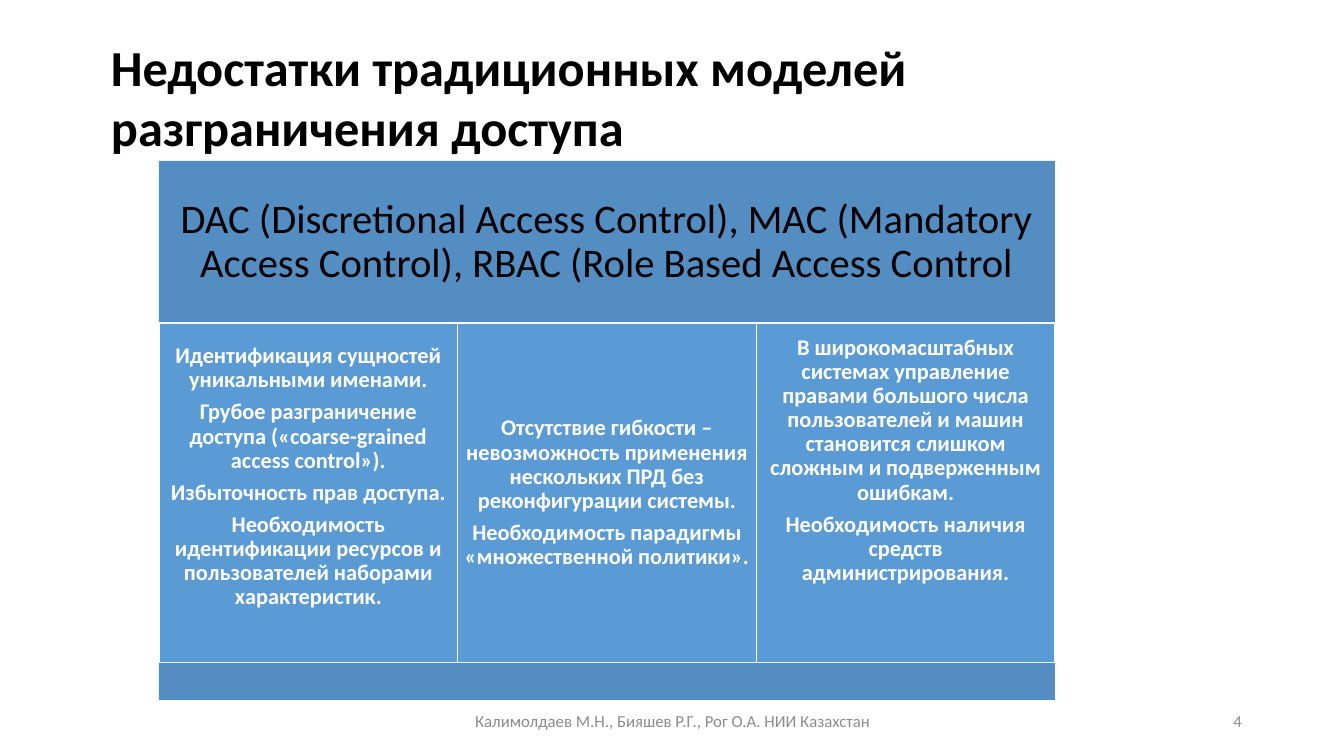
import pptx
import pptx.util
import pptx.dml.color
import pptx.enum.shapes
import pptx.enum.text

ALIGN = pptx.enum.text.PP_ALIGN
ANCHOR = pptx.enum.text.MSO_ANCHOR

# Content
TITLE = "Недостатки традиционных моделей разграничения доступа"
HEADING = "DAC (Discretional Access Control), MAC (Mandatory Access Control), RBAC (Role Based Access Control"
# Each column: free space kept below the text (px), paragraphs
COLUMNS = [
    (32, [
        "Идентификация сущностей уникальными именами.",
        "Грубое разграничение доступа («coarse-grained access control»).",
        "Избыточность прав доступа.",
        "Необходимость идентификации ресурсов и пользователей наборами характеристик.",
    ]),
    (0, [
        "Отсутствие гибкости – невозможность применения нескольких ПРД без реконфигурации системы.",
        "Необходимость парадигмы «множественной политики».",
    ]),
    (65, [
        "В широкомасштабных системах управление правами большого числа пользователей и машин "
        "становится слишком сложным и подверженным ошибкам.",
        "Необходимость наличия средств администрирования.",
    ]),
]
FOOTER = "Калимолдаев М.Н., Бияшев Р.Г., Рог О.А. НИИ Казахстан"
NUMBER = "4"

# Geometry in px
SLIDE = (1344, 756)
TITLE_BOX = (101, 31, 1143, 132)
LEFT, TOP, WIDTH = 159, 161, 896
HEADING_HEIGHT, COLUMN_HEIGHT, BASE_HEIGHT = 162, 340, 37
FOOTER_BOX = (446, 701, 454, 40)
NUMBER_BOX = (950, 701, 302, 40)

# Formats
TITLE_FONT = {"size": 36, "bold": True, "color": "000000"}
HEADING_FONT = {"size": 29, "bold": False, "color": "000000"}
COLUMN_FONT = {"size": 16, "bold": True, "color": "FFFFFF"}
FOOTER_FONT = {"size": 12, "bold": False, "color": "8C8C8C"}
BAND, COLUMN, WHITE = "538DC1", "5B9BD5", "FFFFFF"


def px(value):
    return pptx.util.Emu(round(value * 914400 / 100.8))


def rgb(value):
    return pptx.dml.color.RGBColor.from_string(value)


def set_attributes(target, values):
    for name, value in values.items():
        setattr(target, name, value)


def write(shape, texts, font, align, anchor, insets=(10, 5, 10, 5), spacing=None):
    frame = shape.text_frame
    names = ("margin_left", "margin_top", "margin_right", "margin_bottom")
    set_attributes(frame, {
        "word_wrap": True,
        "auto_size": pptx.enum.text.MSO_AUTO_SIZE.NONE,
        "vertical_anchor": anchor,
        **{name: px(inset) for name, inset in zip(names, insets)},
    })
    for index, text in enumerate(texts):
        para = frame.add_paragraph() if index else frame.paragraphs[0]
        set_attributes(para, {"alignment": align, **(spacing or {})})
        span = para.add_run()
        span.text = text
        set_attributes(span.font, {
            "name": "Calibri",
            "size": pptx.util.Pt(font["size"]),
            "bold": font["bold"],
        })
        span.font.color.rgb = rgb(font["color"])


def tight(size):
    return {"line_spacing": 0.9, "space_after": pptx.util.Pt(round(0.35 * size, 1))}


def add_block(page, place, fill, line=None):
    rectangle = pptx.enum.shapes.MSO_SHAPE.RECTANGLE
    block = page.shapes.add_shape(rectangle, *map(px, place))
    block.shadow.inherit = False
    block.fill.solid()
    block.fill.fore_color.rgb = rgb(fill)
    if line:
        block.line.color.rgb = rgb(line)
        block.line.width = pptx.util.Pt(1)
    else:
        block.line.fill.background()
    return block


def main():
    deck = pptx.Presentation()
    deck.slide_width, deck.slide_height = map(px, SLIDE)
    page = deck.slides.add_slide(deck.slide_layouts[5])

    # Title
    title = page.shapes.title
    set_attributes(title, dict(zip(("left", "top", "width", "height"), map(px, TITLE_BOX))))
    write(title, [TITLE], TITLE_FONT, ALIGN.LEFT, ANCHOR.TOP)

    # Heading band
    heading = add_block(page, (LEFT, TOP, WIDTH, HEADING_HEIGHT), BAND)
    write(heading, [HEADING], HEADING_FONT, ALIGN.CENTER, ANCHOR.MIDDLE,
          (12, 12, 12, 12), tight(HEADING_FONT["size"]))

    # Three equal columns
    column_top = TOP + HEADING_HEIGHT
    column_width = WIDTH / len(COLUMNS)
    for index, (space_below, texts) in enumerate(COLUMNS):
        place = (LEFT + index * column_width, column_top, column_width, COLUMN_HEIGHT)
        block = add_block(page, place, COLUMN, WHITE)
        write(block, texts, COLUMN_FONT, ALIGN.CENTER, ANCHOR.MIDDLE,
              (7, 7, 7, 7 + space_below), tight(COLUMN_FONT["size"]))

    # Base band
    add_block(page, (LEFT, column_top + COLUMN_HEIGHT, WIDTH, BASE_HEIGHT), BAND)

    # Footer and slide number
    for text, place, align in (
        (FOOTER, FOOTER_BOX, ALIGN.CENTER),
        (NUMBER, NUMBER_BOX, ALIGN.RIGHT),
    ):
        box = page.shapes.add_textbox(*map(px, place))
        write(box, [text], FOOTER_FONT, align, ANCHOR.MIDDLE)

    deck.save("out.pptx")


if __name__ == "__main__":
    main()
